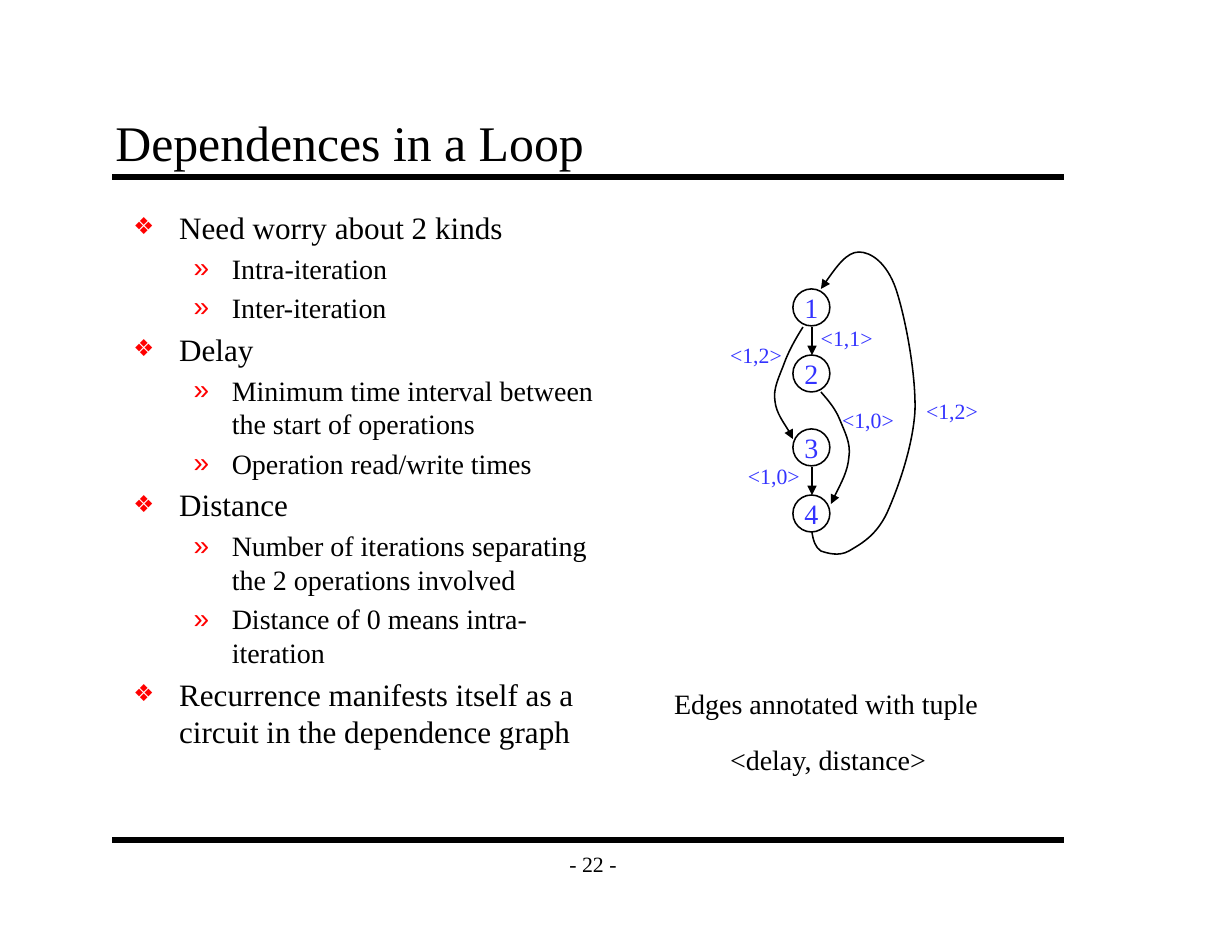
from lxml.etree import SubElement
from pptx import Presentation
from pptx.dml.color import RGBColor
from pptx.enum.shapes import MSO_CONNECTOR, MSO_SHAPE
from pptx.enum.text import MSO_ANCHOR, MSO_AUTO_SIZE, PP_ALIGN
from pptx.oxml.ns import qn
from pptx.util import Inches, Pt

BLACK = RGBColor(0, 0, 0)
BLUE = RGBColor(0x33, 0x33, 0xFF)
RED = RGBColor(0xFF, 0, 0)
FONT = "Times New Roman"


def write(p, text, size=18, color=BLACK, align=PP_ALIGN.LEFT):
    p.alignment = align
    r = p.add_run()
    r.text = text
    r.font.name = FONT
    r.font.size = Pt(size)
    r.font.color.rgb = color


def stroke(s, width=1, arrow=False):
    """Give a shape or connector a black line without a shadow."""
    s.line.color.rgb = BLACK
    s.line.width = Pt(width)
    if arrow:
        SubElement(s.line._get_or_add_ln(), qn("a:tailEnd"), type="triangle")
    SubElement(s._element.spPr, qn("a:effectLst"))


prs = Presentation()
prs.slide_width, prs.slide_height = Inches(11), Inches(8.5)
slide = prs.slides.add_slide(prs.slide_layouts[1])
shapes = slide.shapes

# Rules above and below the content
for y in (1.58, 7.5):
    rule = shapes.add_connector(MSO_CONNECTOR.STRAIGHT, Inches(1), Inches(y), Inches(9.5), Inches(y))
    stroke(rule, width=4)

# Title and list
title, body = shapes.title, slide.placeholders[1]
for s, box, anchor in (
    (title, (0.92, 0.92, 8.5, 0.67), MSO_ANCHOR.BOTTOM),
    (body, (1.08, 1.8, 4.5, 5.7), MSO_ANCHOR.TOP),
):
    s.left, s.top, s.width, s.height = map(Inches, box)
    tf = s.text_frame
    tf.auto_size = MSO_AUTO_SIZE.NONE
    tf.word_wrap = True
    tf.vertical_anchor = anchor
    tf.margin_left = tf.margin_right = Inches(0.11)
    tf.margin_top = tf.margin_bottom = Inches(0.06)

write(title.text_frame.paragraphs[0], "Dependences in a Loop", size=32)

ITEMS = [
    (0, "Need worry about 2 kinds"),
    (1, "Intra-iteration"),
    (1, "Inter-iteration"),
    (0, "Delay"),
    (1, "Minimum time interval between the start of operations"),
    (1, "Operation read/write times"),
    (0, "Distance"),
    (1, "Number of iterations separating the 2 operations involved"),
    (1, "Distance of 0 means intra-iteration"),
    (0, "Recurrence manifests itself as a circuit in the dependence graph"),
]
# Text size, left indent, hanging indent, bullet and bullet size for each level
LEVELS = [(20, 0.41, 0.41, "❖", 75), (18, 0.88, 0.34, "»", 100)]
tf = body.text_frame
for i, (level, text) in enumerate(ITEMS):
    size, left, hang, bullet, percent = LEVELS[level]
    p = tf.add_paragraph() if i else tf.paragraphs[0]
    p.level = level
    write(p, text, size=size)
    pPr = p._p.get_or_add_pPr()
    pPr.set("marL", str(Inches(left)))
    pPr.set("indent", str(-Inches(hang)))
    SubElement(SubElement(pPr, qn("a:buClr")), qn("a:srgbClr"), val=str(RED))
    SubElement(pPr, qn("a:buSzPct"), val=str(percent * 1000))
    SubElement(pPr, qn("a:buChar"), char=bullet)

# Graph nodes
NODE_X, NODE_D = 7.08, 0.33
NODE_TOPS = (2.58, 3.17, 3.83, 4.42)
for number, y in enumerate(NODE_TOPS, 1):
    node = shapes.add_shape(MSO_SHAPE.OVAL, Inches(NODE_X), Inches(y), Inches(NODE_D), Inches(NODE_D))
    node.fill.background()
    stroke(node)
    tf = node.text_frame
    tf.word_wrap = False
    tf.vertical_anchor = MSO_ANCHOR.MIDDLE
    write(tf.paragraphs[0], str(number), color=BLUE, align=PP_ALIGN.CENTER)

# Straight edges 1-2 and 3-4
for y1, y2 in ((2.92, 3.17), (4.17, 4.42)):
    edge = shapes.add_connector(MSO_CONNECTOR.STRAIGHT, Inches(7.25), Inches(y1), Inches(7.25), Inches(y2))
    stroke(edge, arrow=True)

# Curved edges: a start point, then three Bézier points for each segment
CURVES = [
    # 1 to 3
    [(7.17, 2.92), (7.1, 3.03), (7.04, 3.14), (7, 3.25), (6.96, 3.36), (6.9, 3.47),
     (6.92, 3.58), (6.93, 3.69), (7.06, 3.86), (7.08, 3.92)],
    # 2 to 4
    [(7.33, 3.5), (7.4, 3.58), (7.46, 3.65), (7.5, 3.75), (7.54, 3.85), (7.6, 3.96),
     (7.58, 4.08), (7.57, 4.21), (7.49, 4.35), (7.42, 4.5)],
    # 4 back to 1
    [(7.25, 4.75), (7.26, 4.82), (7.28, 4.89), (7.33, 4.92), (7.39, 4.94), (7.49, 4.97),
     (7.58, 4.92), (7.68, 4.86), (7.82, 4.79), (7.92, 4.58), (8.01, 4.38), (8.15, 4),
     (8.17, 3.67), (8.18, 3.33), (8.08, 2.82), (8, 2.58), (7.92, 2.35), (7.78, 2.25),
     (7.67, 2.25), (7.56, 2.25), (7.44, 2.42), (7.33, 2.58)],
]
for curve in CURVES:
    start, *points = [(Inches(x), Inches(y)) for x, y in curve]
    builder = shapes.build_freeform(*start)
    builder.add_line_segments(points, close=False)
    edge = builder.convert_to_shape()
    edge.fill.background()
    stroke(edge, arrow=True)
    # Join every three line segments into one cubic segment
    outline = edge._element.find(".//" + qn("a:path"))
    segments = outline.findall(qn("a:lnTo"))
    for i in range(0, len(segments), 3):
        cubic = SubElement(outline, qn("a:cubicBezTo"))
        for segment in segments[i:i + 3]:
            cubic.append(segment[0])
            outline.remove(segment)

# Edge labels and caption
EDGE_LABEL, CAPTION = (14, BLUE), (18, BLACK)
LABELS = [
    ("<1,1>", (7.23, 2.85, 0.7, 0.33), EDGE_LABEL),
    ("<1,0>", (7.42, 3.58, 0.7, 0.33), EDGE_LABEL),
    ("<1,2>", (8.17, 3.5, 0.7, 0.33), EDGE_LABEL),
    ("<1,2>", (6.42, 3, 0.7, 0.33), EDGE_LABEL),
    ("<1,0>", (6.58, 4.08, 0.7, 0.33), EDGE_LABEL),
    ("Edges annotated with tuple", (5.92, 6.08, 2.95, 0.4), CAPTION),
    ("<delay, distance>", (6.42, 6.58, 2, 0.4), CAPTION),
]
for text, box, (size, color) in LABELS:
    tf = shapes.add_textbox(*map(Inches, box)).text_frame
    tf.word_wrap = False
    tf.auto_size = MSO_AUTO_SIZE.NONE
    write(tf.paragraphs[0], text, size=size, color=color)

# Page number
tf = shapes.add_textbox(Inches(4.92), Inches(7.5), Inches(0.75), Inches(0.42)).text_frame
tf.word_wrap = False
tf.vertical_anchor = MSO_ANCHOR.MIDDLE
write(tf.paragraphs[0], "- 22 -", size=14, align=PP_ALIGN.CENTER)

prs.save("out.pptx")
